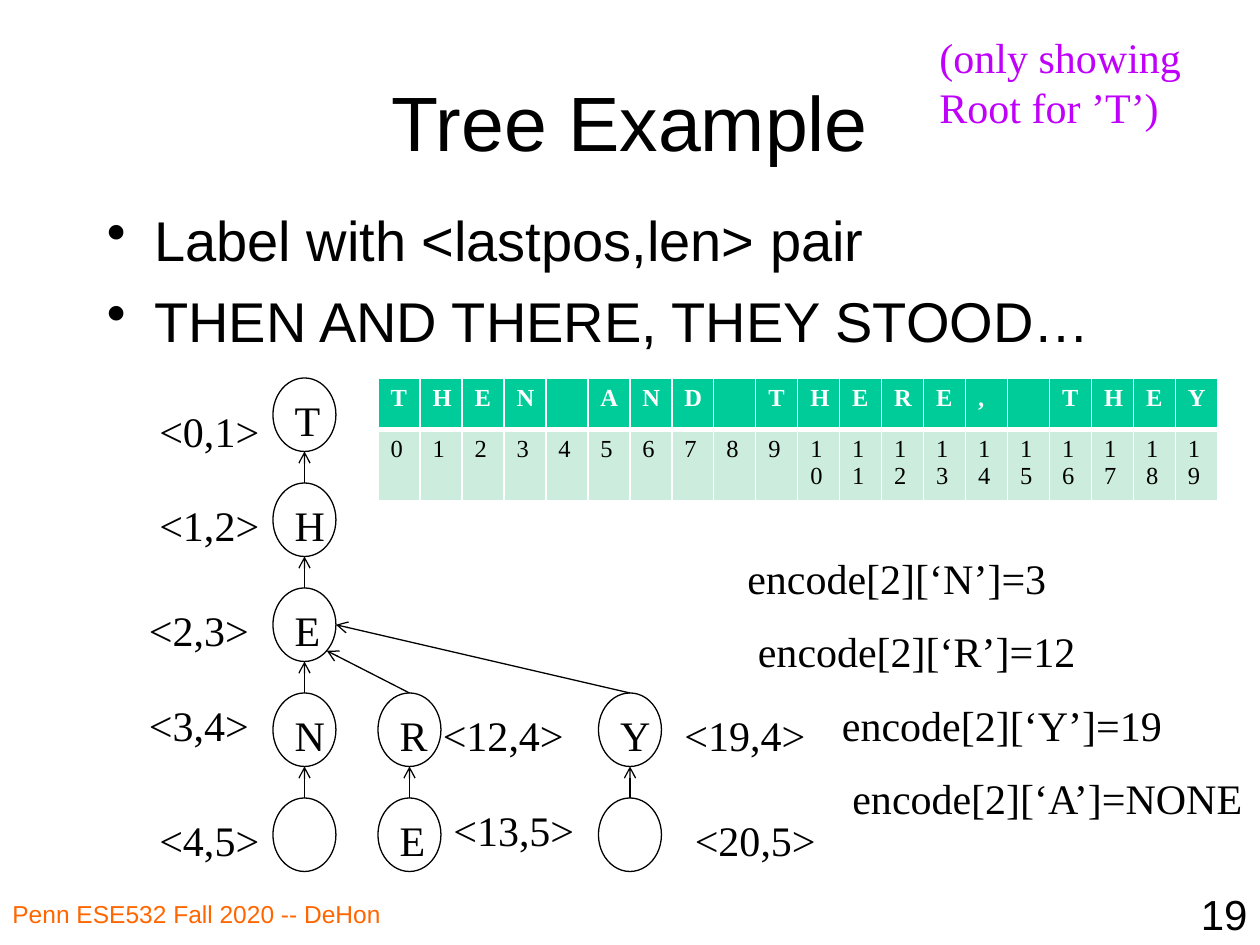
"""Build the tree example slide with its position table and encodings."""
import dataclasses
import math

import pptx
import pptx.dml.color
import pptx.enum.shapes
import pptx.enum.text
import pptx.oxml
import pptx.oxml.ns
import pptx.util

PX = 7620


@dataclasses.dataclass(frozen=True)
class Theme:
    sans: str = "Arial"
    serif: str = "Times New Roman"
    ink: str = "000000"
    paper: str = "FFFFFF"
    foot: str = "FF6600"
    note: str = "BF00FA"
    head: str = "00CC99"
    body: str = "CCECDE"
    title: int = 44
    list: int = 32
    text: int = 24
    small: int = 14
    line: float = 0.75


T = Theme()

TITLE = "Tree Example"
POINTS = ["Label with <lastpos,len> pair", "THEN AND THERE, THEY STOOD…"]
FOOT = "Penn ESE532 Fall 2020 -- DeHon"
PAGE = "19"
NOTE = ["(only showing", "Root for ’T’)"]
CHARS = "THEN AND THERE, THEY"

COLS = [260, 360, 570]
TOP, STEP, WIDE, HIGH = 360, 100, 60, 70
NODES = [
    ("T", 0, 0), ("H", 0, 1), ("E", 0, 2), ("N", 0, 3), ("", 0, 4),
    ("R", 1, 3), ("Y", 2, 3), ("E", 1, 4), ("", 2, 4),
]
EDGES = [
    ((0, 1), (0, 0), 90), ((0, 2), (0, 1), 90), ((0, 3), (0, 2), 90),
    ((0, 4), (0, 3), 90), ((1, 4), (1, 3), 90), ((1, 3), (0, 2), 45),
    ((2, 3), (0, 2), 0), ((2, 4), (2, 3), 90),
]
LABELS = [
    ("<0,1>", 140, 380, 122), ("<1,2>", 140, 470, 122),
    ("<2,3>", 130, 570, 122), ("<3,4>", 130, 660, 122),
    ("<12,4>", 410, 670, 142), ("<13,5>", 420, 760, 142),
    ("<19,4>", 640, 670, 142), ("<4,5>", 140, 770, 122),
    ("<20,5>", 650, 770, 142),
]
CODES = [
    ("encode[2][‘N’]=3", 700, 520, 312), ("encode[2][‘R’]=12", 710, 590, 330),
    ("encode[2][‘Y’]=19", 790, 660, 332), ("encode[2][‘A’]=NONE", 800, 730, 400),
]


def emu(*nums):
    return [round(n * PX) for n in nums]


def rgb(code):
    return pptx.dml.color.RGBColor.from_string(code)


def put(frame, text, size=T.text, font=T.serif, color=T.ink, bold=False,
        align="LEFT", mark=None, gap=0):
    lines = [text] if isinstance(text, str) else text
    for i, line in enumerate(lines):
        para = frame.add_paragraph() if i else frame.paragraphs[0]
        para.alignment = getattr(pptx.enum.text.PP_ALIGN, align)
        para.space_before = pptx.util.Pt(gap)
        run = para.add_run()
        run.text = line
        run.font.size = pptx.util.Pt(size)
        run.font.name = font
        run.font.bold = bold
        run.font.color.rgb = rgb(color)
        if mark:
            props = para._p.get_or_add_pPr()
            props.set("marL", str(45 * PX))
            props.set("indent", str(-45 * PX))
            add(props, f'<a:buChar {NS} char="{mark}"/>')


NS = pptx.oxml.ns.nsdecls("a")


def add(node, xml):
    node.append(pptx.oxml.parse_xml(xml))


def box(slide, text, x, y, w, h=60, wrap=False, **fmt):
    frame = slide.shapes.add_textbox(*emu(x, y, w, h)).text_frame
    frame.word_wrap = wrap
    sizes = pptx.enum.text.MSO_AUTO_SIZE
    frame.auto_size = sizes.NONE if wrap else sizes.SHAPE_TO_FIT_TEXT
    put(frame, text, **fmt)


def node(slide, text, col, row):
    kind = pptx.enum.shapes.MSO_SHAPE.OVAL
    spot = emu(COLS[col], TOP + STEP * row, WIDE, HIGH)
    oval = slide.shapes.add_shape(kind, *spot)
    oval.shadow.inherit = False
    oval.fill.solid()
    oval.fill.fore_color.rgb = rgb(T.paper)
    oval.line.color.rgb = rgb(T.ink)
    oval.line.width = pptx.util.Pt(T.line)
    if text:
        oval.text_frame.vertical_anchor = pptx.enum.text.MSO_ANCHOR.TOP
        put(oval.text_frame, text)


def rim(col, row, angle):
    turn = math.radians(angle)
    x = COLS[col] + WIDE / 2 * (1 + math.cos(turn))
    y = TOP + STEP * row + HIGH / 2 * (1 + math.sin(turn))
    return emu(x, y)


def edge(slide, child, root, angle):
    kind = pptx.enum.shapes.MSO_CONNECTOR.STRAIGHT
    link = slide.shapes.add_connector(kind, *rim(*child, -90), *rim(*root, angle))
    link.line.color.rgb = rgb(T.ink)
    link.line.width = pptx.util.Pt(T.line)
    add(link.line._get_or_add_ln(), f'<a:tailEnd {NS} type="arrow"/>')
    add(link._element.spPr, f"<a:effectLst {NS}/>")


def paint(cell, text, fill, color, bold, rules):
    props = cell._tc.get_or_add_tcPr()
    for side, width in zip("LRTB", rules):
        add(props, f'<a:ln{side} {NS} w="{width * 12700}"><a:solidFill>'
                   f'<a:srgbClr val="{T.paper}"/></a:solidFill></a:ln{side}>')
    cell.fill.solid()
    cell.fill.fore_color.rgb = rgb(fill)
    if text.strip():
        put(cell.text_frame, text, size=T.small, color=color, bold=bold)


def grid(slide):
    count = len(CHARS)
    spot = emu(360, 360, 40 * count, 116)
    table = slide.shapes.add_table(2, count, *spot).table
    table.horz_banding = False
    for row, high in zip(table.rows, (49, 67)):
        row.height = high * PX
    for i, char in enumerate(CHARS):
        table.columns[i].width = 40 * PX
        paint(table.cell(0, i), char, T.head, T.paper, True, (1, 1, 1, 3))
        paint(table.cell(1, i), str(i), T.body, T.ink, False, (1, 1, 3, 1))


def main():
    deck = pptx.Presentation()
    deck.slide_width, deck.slide_height = emu(1200, 900)
    slide = deck.slides.add_slide(deck.slide_layouts[5])
    title = slide.shapes.title
    title.left, title.top, title.width, title.height = emu(90, 40, 1020, 150)
    title.text_frame.vertical_anchor = pptx.enum.text.MSO_ANCHOR.MIDDLE
    put(title.text_frame, TITLE, size=T.title, font=T.sans, align="CENTER")
    box(slide, POINTS, 90, 190, 1020, 160, wrap=True, size=T.list,
        font=T.sans, mark="•", gap=7.5)
    box(slide, FOOT, 0, 850, 460, 50, wrap=True, size=T.small,
        font=T.sans, color=T.foot)
    box(slide, PAGE, 950, 840, 250, wrap=True, font=T.sans, align="RIGHT")
    for item in NODES:
        node(slide, *item)
    for item in EDGES:
        edge(slide, *item)
    for item in LABELS:
        box(slide, *item)
    grid(slide)
    for item in CODES:
        box(slide, *item)
    box(slide, NOTE, 883, 24, 257, 109, color=T.note)
    deck.save("out.pptx")


if __name__ == "__main__":
    main()
